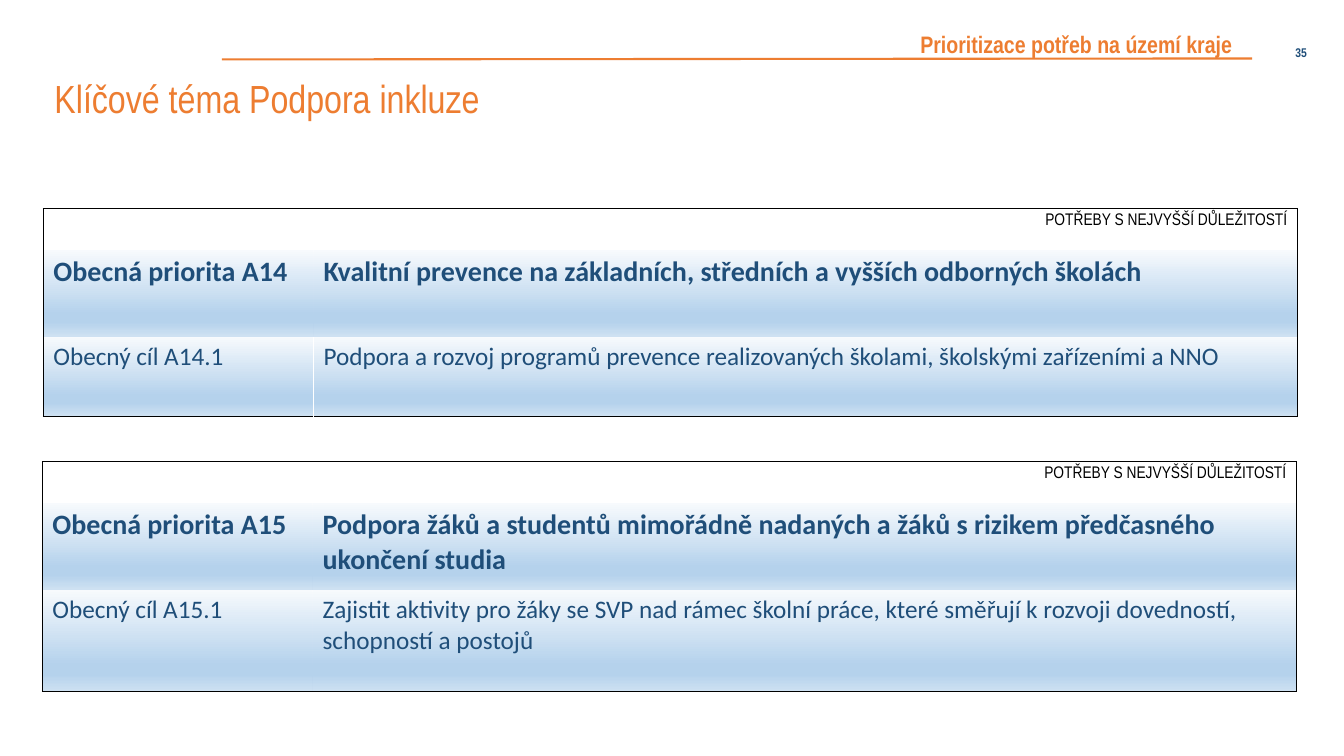
import pptx
import pptx.dml.color
import pptx.enum.shapes
import pptx.enum.text
import pptx.oxml
import pptx.oxml.ns
import pptx.util

Inches, Pt = pptx.util.Inches, pptx.util.Pt
ALIGN, ANCHOR = pptx.enum.text.PP_ALIGN, pptx.enum.text.MSO_ANCHOR

# Content
TITLE = "Klíčové téma Podpora inkluze"
SECTION = "Prioritizace potřeb na území kraje"
PAGE = "35"
BADGE = "POTŘEBY S NEJVYŠŠÍ DŮLEŽITOSTÍ"
TABLES = [
    dict(left=0.43, top=2.07, heights=(0.41, 0.86, 0.79), divider=True, rows=[
        ("", BADGE),
        ("Obecná priorita A14",
         "Kvalitní prevence na základních, středních a vyšších odborných školách"),
        ("Obecný cíl A14.1",
         "Podpora a rozvoj programů prevence realizovaných školami, školskými zařízeními a NNO"),
    ]),
    dict(left=0.42, top=4.58, heights=(0.41, 0.86, 1.01), divider=False, rows=[
        ("", BADGE),
        ("Obecná priorita A15",
         "Podpora žáků a studentů mimořádně nadaných a žáků s rizikem předčasného ukončení studia"),
        ("Obecný cíl A15.1",
         "Zajistit aktivity pro žáky se SVP nad rámec školní práce, které směřují k rozvoji "
         "dovedností, schopností a postojů"),
    ]),
]

# Formats
ORANGE, NAVY, BLACK, WHITE = "ED7D31", "1F4E79", "000000", "FFFFFF"
COL_WIDTHS = (2.68, 9.76)
GRADIENT = [(0, "F7FAFD"), (74, "B5D2EC"), (83, "B5D2EC"), (100, "CEE1F2")]
TITLE_FONT = dict(name="Arial Narrow", size=Pt(28), bold=False, color=ORANGE)
SECTION_FONT = dict(name="Arial Narrow", size=Pt(17), bold=True, color=ORANGE)
PAGE_FONT = dict(name="Arial Narrow", size=Pt(9), bold=True, color=NAVY)
ROW_FONTS = [
    dict(name="Arial Narrow", size=Pt(12), bold=False, color=BLACK),
    dict(name="Calibri", size=Pt(20), bold=True, color=NAVY),
    dict(name="Calibri", size=Pt(18), bold=False, color=NAVY),
]


def rgb(color):
    return pptx.dml.color.RGBColor.from_string(color)


def write(tf, text, font, align=ALIGN.LEFT, spacing=1.0):
    p = tf.paragraphs[0]
    p.alignment, p.line_spacing = align, spacing
    r = p.add_run()
    r.text = text
    for key, value in font.items():
        if key == "color":
            r.font.color.rgb = rgb(value)
        else:
            setattr(r.font, key, value)


def frame(tf, anchor):
    tf.word_wrap = True
    tf.auto_size = pptx.enum.text.MSO_AUTO_SIZE.NONE
    tf.vertical_anchor = anchor
    return tf


def add_label(slide, box, anchor, *text_args):
    s = slide.shapes.add_textbox(*map(Inches, box))
    write(frame(s.text_frame, anchor), *text_args)


def add_xml(parent, tag, attrs, body):
    ns = pptx.oxml.ns.nsdecls("a")
    parent.append(pptx.oxml.parse_xml(f"<a:{tag} {ns} {attrs}>{body}</a:{tag}>"))


def solid(color):
    return f'<a:solidFill><a:srgbClr val="{color}"/></a:solidFill>'


def format_cell(cell, borders, shaded):
    tc_pr = cell._tc.get_or_add_tcPr()
    for side in "LRTB":
        color = borders.get(side)
        add_xml(tc_pr, f"ln{side}", 'w="12700"', solid(color) if color else "<a:noFill/>")
    if shaded:
        stops = "".join(f'<a:gs pos="{pos * 1000}"><a:srgbClr val="{color}"/></a:gs>'
                        for pos, color in GRADIENT)
        add_xml(tc_pr, "gradFill", 'rotWithShape="1"',
                f'<a:gsLst>{stops}</a:gsLst><a:lin ang="5400000" scaled="0"/>')
    else:
        add_xml(tc_pr, "noFill", "", "")


def add_needs_table(slide, left, top, heights, divider, rows):
    size = (sum(COL_WIDTHS), sum(heights))
    table = slide.shapes.add_table(len(rows), len(COL_WIDTHS),
                                   *map(Inches, (left, top, *size))).table
    table.first_row = table.horz_banding = False
    for column, width in zip(table.columns, COL_WIDTHS):
        column.width = Inches(width)
    last = len(rows) - 1
    for i, texts in enumerate(rows):
        table.rows[i].height = Inches(heights[i])
        for j, text in enumerate(texts):
            cell = table.cell(i, j)
            outer, inner = ("L", "R") if j == 0 else ("R", "L")
            borders = {outer: BLACK}
            if i == 0:
                borders["T"] = BLACK
            if i == last:
                borders["B"] = BLACK
                if divider:
                    borders[inner] = WHITE
            format_cell(cell, borders, shaded=i > 0)
            if text:
                write(cell.text_frame, text, ROW_FONTS[i],
                      ALIGN.RIGHT if i == 0 else ALIGN.LEFT)


prs = pptx.Presentation()
prs.slide_width, prs.slide_height = Inches(13.33), Inches(7.5)
slide = prs.slides.add_slide(prs.slide_layouts[5])

# Header rule
rule = slide.shapes.add_connector(pptx.enum.shapes.MSO_CONNECTOR.STRAIGHT,
                                  *map(Inches, (2.2, 0.59, 12.42, 0.58)))
rule.line.color.rgb, rule.line.width = rgb(ORANGE), Pt(1.5)
add_xml(rule._element.spPr, "effectLst", "", "")

# Title
title = slide.shapes.title
title.left, title.top, title.width, title.height = map(Inches, (0.44, 0.69, 12.9, 0.62))
write(frame(title.text_frame, ANCHOR.MIDDLE), TITLE, TITLE_FONT, ALIGN.LEFT, 0.9)

# Section name and page number
add_label(slide, (9.03, 0.32, 3.38, 0.31), ANCHOR.BOTTOM, SECTION, SECTION_FONT, ALIGN.LEFT, 0.9)
add_label(slide, (12.27, 0.32, 0.79, 0.4), ANCHOR.MIDDLE, PAGE, PAGE_FONT, ALIGN.RIGHT)

# Tables of needs
for table in TABLES:
    add_needs_table(slide, **table)

prs.save("out.pptx")
